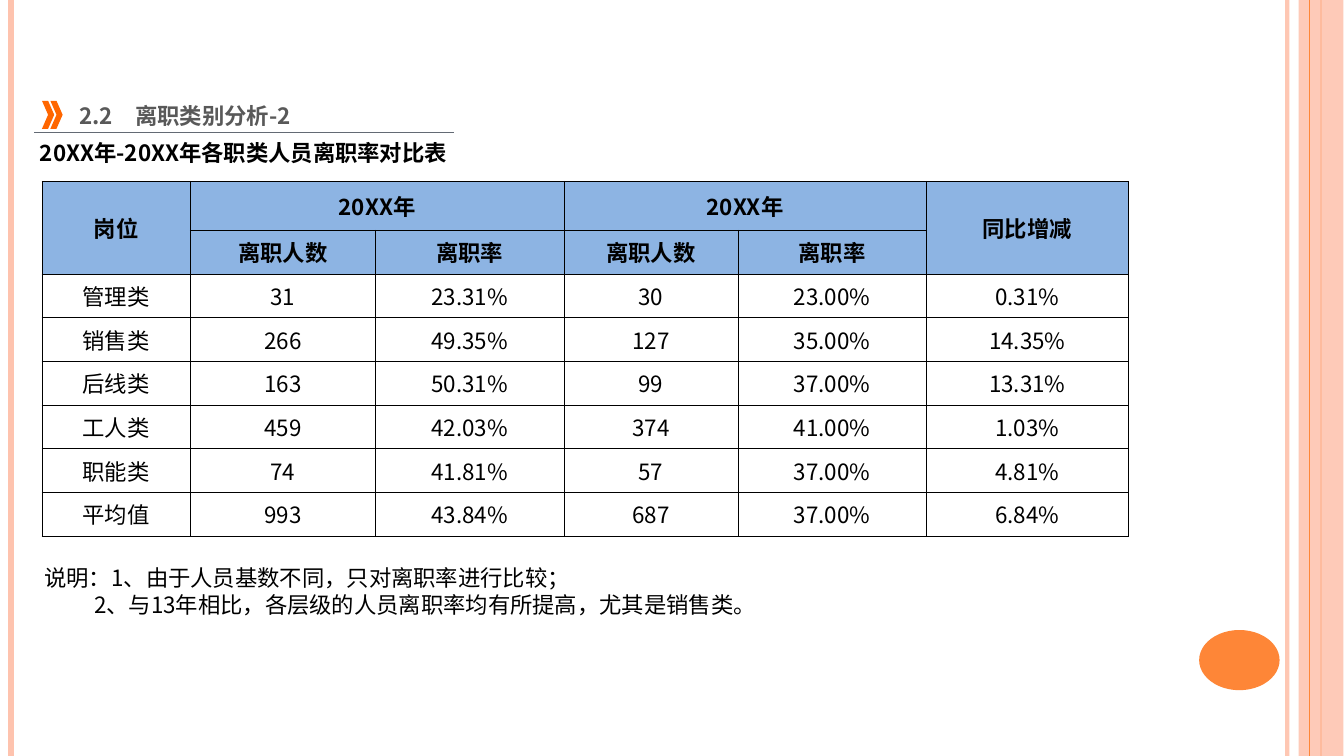
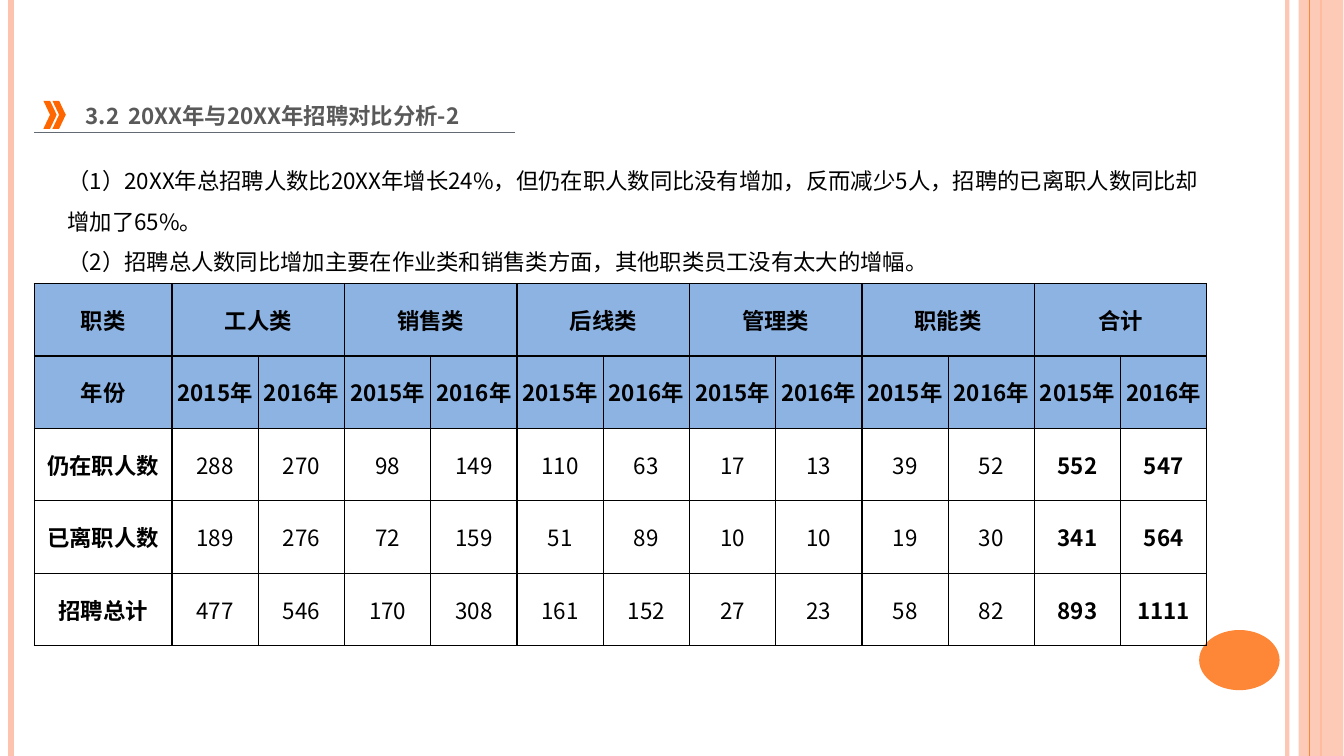
import pptx
import pptx.dml.color
import pptx.enum.shapes
import pptx.enum.text
import pptx.oxml.ns
import pptx.util
from lxml import etree

Pt = pptx.util.Pt
Color = pptx.dml.color.RGBColor
Shape = pptx.enum.shapes.MSO_SHAPE
Align = pptx.enum.text.PP_ALIGN
Anchor = pptx.enum.text.MSO_ANCHOR
qn = pptx.oxml.ns.qn

BLACK = Color(0x00, 0x00, 0x00)
GREY = Color(0x59, 0x59, 0x59)
SLATE = Color(0x63, 0x6A, 0x74)
ORANGE = Color(0xFE, 0x86, 0x37)
FLAME = Color(0xFF, 0x66, 0x00)
PEACH = Color(0xFE, 0xC3, 0xAE)
SKY = Color(0x8D, 0xB4, 0xE3)
BLUE = Color(0x8D, 0xB3, 0xE2)
FONT = "Noto Sans CJK SC"
SIZE = 16
WIDE, HIGH = 960.5, 540


class Deck:
    """Hold the shared style and the current slide."""

    def __init__(self):
        self.prs = pptx.Presentation()
        self.prs.slide_width, self.prs.slide_height = Pt(WIDE), Pt(HIGH)
        self.base = self.prs.slide_layouts[1]
        self.slide = None

    def page(self):
        self.slide = self.prs.slides.add_slide(self.base)

    def frame(self):
        self.line(920, 0, 920, HIGH, PEACH, 3, 93)
        self.line(8, 0, 8, HIGH, PEACH, 4.5)
        self.line(944, 0, 944, HIGH, ORANGE, 1.5)
        self.shape(Shape.RECTANGLE, 928, 0, 32, HIGH, PEACH, 87)
        self.line(936, 0, 936, HIGH, ORANGE, 0.75)
        self.shape(Shape.OVAL, 857, 450, 57.5, 43, ORANGE)
        tree = self.base.shapes.element
        parts = [s for s in self.slide.shapes if not s.is_placeholder]
        for step, part in enumerate(parts):
            part.element.xpath(".//p:cNvPr")[0].set("id", str(100 + step))
            tree.insert(2 + step, part.element)

    def fade(self, item, alpha):
        tint = item.element.spPr.find(".//" + qn("a:srgbClr"))
        etree.SubElement(tint, qn("a:alpha")).set("val", str(alpha * 1000))

    def line(self, x, y, right, low, color, width, alpha=100):
        kind = pptx.enum.shapes.MSO_CONNECTOR.STRAIGHT
        item = self.slide.shapes.add_connector(kind, Pt(x), Pt(y), Pt(right), Pt(low))
        item.line.color.rgb = color
        item.line.width = Pt(width)
        etree.SubElement(item.element.spPr, qn("a:effectLst"))
        if alpha < 100:
            self.fade(item, alpha)

    def shape(self, kind, x, y, width, height, color, alpha=100):
        item = self.slide.shapes.add_shape(kind, Pt(x), Pt(y), Pt(width), Pt(height))
        item.shadow.inherit = False
        item.fill.solid()
        item.fill.fore_color.rgb = color
        item.line.fill.background()
        if alpha < 100:
            self.fade(item, alpha)

    def run(self, par, text, bold=False, color=BLACK):
        run = par.add_run()
        run.text = text
        font = run.font
        font.size, font.bold, font.name = Pt(SIZE), bold, FONT
        font.color.rgb = color
        etree.SubElement(run._r.get_or_add_rPr(), qn("a:ea")).set("typeface", FONT)

    def place(self, item, x, y, width, height):
        item.left, item.top = Pt(x), Pt(y)
        item.width, item.height = Pt(width), Pt(height)
        frame = item.text_frame
        frame.word_wrap = True
        frame.auto_size = pptx.enum.text.MSO_AUTO_SIZE.NONE
        frame.vertical_anchor = Anchor.TOP
        return frame

    def title(self, mark, text, x, tab, right, icon, gap, width):
        frame = self.place(self.slide.shapes.title, x, 67.5, right - x + 20, 28)
        par = frame.paragraphs[0]
        par.alignment, par.line_spacing = Align.LEFT, 1.1
        stops = etree.SubElement(par._p.get_or_add_pPr(), qn("a:tabLst"))
        stop = etree.SubElement(stops, qn("a:tab"))
        stop.set("pos", str(Pt(tab)))
        stop.set("algn", "l")
        self.run(par, mark + "\t" + text, True, GREY)
        for step in range(2):
            self.shape(Shape.CHEVRON, icon + step * gap, 72, width, 20, FLAME)
        self.line(24.5, 94.5, right, 94.5, SLATE, 1)

    def body(self, rows, x, y, width, height, space):
        frame = self.place(self.slide.placeholders[1], x, y, width, height)
        for step, (text, left) in enumerate(rows):
            par = frame.add_paragraph() if step else frame.paragraphs[0]
            par.line_spacing = space
            par.space_before = Pt(0)
            prop = par._p.get_or_add_pPr()
            prop.set("marL", str(Pt(left)))
            prop.set("indent", "0")
            etree.SubElement(prop, qn("a:buNone"))
            self.run(par, text)

    def label(self, text, x, y, width, height):
        item = self.slide.shapes.add_textbox(Pt(x), Pt(y), Pt(width), Pt(height))
        frame = self.place(item, x, y, width, height)
        self.run(frame.paragraphs[0], text, True)

    def edge(self, cell, width):
        prop = cell._tc.get_or_add_tcPr()
        for step, side in enumerate(("lnL", "lnR", "lnT", "lnB")):
            line = etree.Element(qn("a:" + side))
            line.set("w", str(Pt(width)))
            fill = etree.SubElement(line, qn("a:solidFill"))
            etree.SubElement(fill, qn("a:srgbClr")).set("val", str(BLACK))
            prop.insert(step, line)

    def table(self, x, y, cols, rows, data, spans, fill, edge, bold):
        item = self.slide.shapes.add_table(
            len(rows), len(cols), Pt(x), Pt(y), Pt(sum(cols)), Pt(sum(rows)))
        grid = item.table
        grid.first_row = grid.horz_banding = False
        for col, width in zip(grid.columns, cols):
            col.width = Pt(width)
        for row, height in zip(grid.rows, rows):
            row.height = Pt(height)
        for r, line in enumerate(data):
            for c, text in enumerate(line):
                cell = grid.cell(r, c)
                cell.margin_left = cell.margin_right = 0
                cell.margin_top = cell.margin_bottom = 0
                cell.vertical_anchor = Anchor.MIDDLE
                if r < 2:
                    cell.fill.solid()
                    cell.fill.fore_color.rgb = fill
                else:
                    cell.fill.background()
                self.edge(cell, edge)
                par = cell.text_frame.paragraphs[0]
                par.alignment = Align.CENTER
                if text:
                    self.run(par, text, r < 2 or c in bold)
        for top, left, low, right in spans:
            grid.cell(top, left).merge(grid.cell(low, right))


def leave(deck):
    deck.title("2.2", "离职类别分析-2", 49.5, 40, 324.5, 30, 6, 8.75)
    deck.label("20XX年-20XX年各职类人员离职率对比表", 21.5, 96, 340, 27)
    data = [
        ["岗位", "20XX年", "", "20XX年", "", "同比增减"],
        ["", *["离职人数", "离职率"] * 2, ""],
        ["管理类", "31", "23.31%", "30", "23.00%", "0.31%"],
        ["销售类", "266", "49.35%", "127", "35.00%", "14.35%"],
        ["后线类", "163", "50.31%", "99", "37.00%", "13.31%"],
        ["工人类", "459", "42.03%", "374", "41.00%", "1.03%"],
        ["职能类", "74", "41.81%", "57", "37.00%", "4.81%"],
        ["平均值", "993", "43.84%", "687", "37.00%", "6.84%"],
    ]
    spans = [(0, 0, 1, 0), (0, 1, 0, 2), (0, 3, 0, 4), (0, 5, 1, 5)]
    cols = [106, 132.5, 134.5, 124.5, 134.5, 144.5]
    deck.table(30, 129.5, cols, [35] + [31.2] * 7, data, spans, SKY, 0.5, ())
    notes = [("说明：1、由于人员基数不同，只对离职率进行比较；", 0),
             ("2、与13年相比，各层级的人员离职率均有所提高，尤其是销售类。", 35.5)]
    deck.body(notes, 24.5, 399.5, 686, 46, 1)


def hire(deck):
    deck.title("3.2", "20XX年与20XX年招聘对比分析-2", 54, 30.5, 368, 31, 6.5, 9.5)
    notes = [("（1）20XX年总招聘人数比20XX年增长24%，但仍在职人数同比没有增加，"
              "反而减少5人，招聘的已离职人数同比却增加了65%。", 0),
             ("（2）招聘总人数同比增加主要在作业类和销售类方面，其他职类员工没有太大的增幅。", 0)]
    deck.body(notes, 41, 106.5, 832.5, 94.5, 1.5)
    heads = ["工人类", "销售类", "后线类", "管理类", "职能类", "合计"]
    data = [
        ["职类"] + [text for head in heads for text in (head, "")],
        ["年份"] + ["2015年", "2016年"] * len(heads),
        ["仍在职人数", "288", "270", "98", "149", "110", "63",
         "17", "13", "39", "52", "552", "547"],
        ["已离职人数", "189", "276", "72", "159", "51", "89",
         "10", "10", "19", "30", "341", "564"],
        ["招聘总计", "477", "546", "170", "308", "161", "152",
         "27", "23", "58", "82", "893", "1111"],
    ]
    spans = [(0, c, 0, c + 1) for c in range(1, 13, 2)]
    cols = [98.5] + [61.65] * 12
    deck.table(24.5, 202.5, cols, [51.75] * 5, data, spans, BLUE, 1, (0, 11, 12))


def main():
    deck = Deck()
    deck.page()
    deck.frame()
    leave(deck)
    deck.page()
    hire(deck)
    deck.prs.save("out.pptx")


if __name__ == "__main__":
    main()
